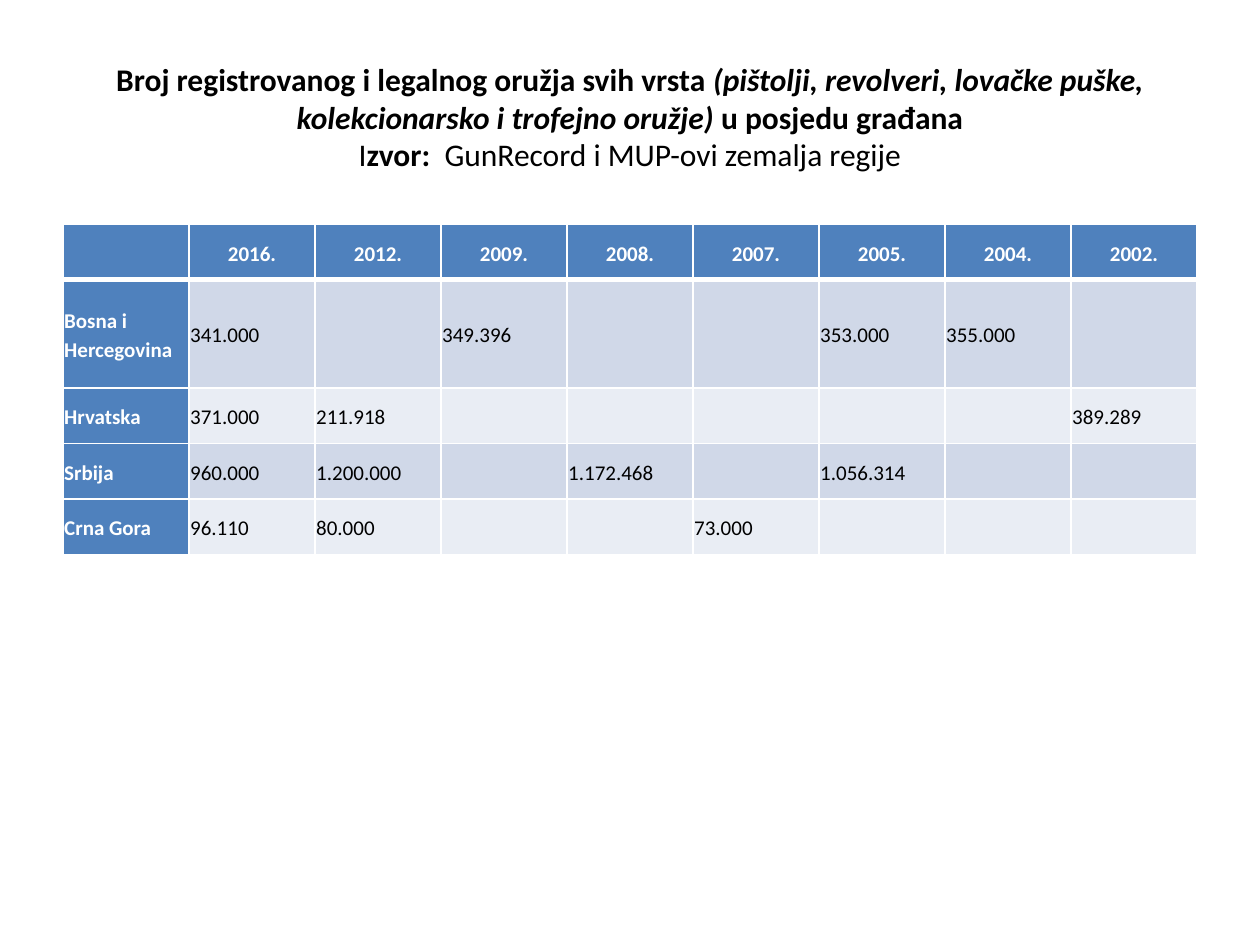
"""Build a slide with a table of registered weapons by country and year."""
import pptx
import pptx.dml.color
import pptx.enum.text
import pptx.oxml
import pptx.oxml.ns
import pptx.util

Inches, Pt = pptx.util.Inches, pptx.util.Pt
RGB = pptx.dml.color.RGBColor
ALIGN = pptx.enum.text.PP_ALIGN
MIDDLE = pptx.enum.text.MSO_ANCHOR.MIDDLE

BLACK = RGB(0x00, 0x00, 0x00)
WHITE = RGB(0xFF, 0xFF, 0xFF)
BLUE = RGB(0x4F, 0x81, 0xBD)
BANDS = [RGB(0xE9, 0xED, 0xF4), RGB(0xD0, 0xD8, 0xE8)]

YEARS = ["2016.", "2012.", "2009.", "2008.", "2007.", "2005.", "2004.", "2002."]
COUNTS = {
    "Bosna i Hercegovina": {"2016.": "341.000", "2009.": "349.396",
                            "2005.": "353.000", "2004.": "355.000"},
    "Hrvatska": {"2016.": "371.000", "2012.": "211.918", "2002.": "389.289"},
    "Srbija": {"2016.": "960.000", "2012.": "1.200.000",
               "2008.": "1.172.468", "2005.": "1.056.314"},
    "Crna Gora": {"2016.": "96.110", "2012.": "80.000", "2007.": "73.000"},
}
HEADING = [
    [("Broj registrovanog i legalnog oružja svih vrsta ", True, False),
     ("(pištolji, revolveri, lovačke puške, kolekcionarsko i trofejno oružje) ", True, True),
     ("u posjedu građana", True, False)],
    [("I", False, False), ("zvor:  ", True, False),
     ("GunRecord i MUP-ovi zemalja regije", False, False)],
]


def write(para, text, size, color, bold, italic=False):
    run = para.add_run()
    run.text = text
    font = run.font
    font.name, font.size = "Calibri", Pt(size)
    font.bold, font.italic = bold, italic
    font.color.rgb = color


def edge(cell, side, width, index):
    line = pptx.oxml.parse_xml(
        f'<a:ln{side} {pptx.oxml.ns.nsdecls("a")} w="{Pt(width)}">'
        f'<a:solidFill><a:srgbClr val="{WHITE}"/></a:solidFill></a:ln{side}>')
    cell._tc.get_or_add_tcPr().insert(index, line)


deck = pptx.Presentation()
deck.slide_width, deck.slide_height = Inches(10), Inches(7.5)
slide = deck.slides.add_slide(deck.slide_layouts[5])
left, width = int(deck.slide_width * 0.05), int(deck.slide_width * 0.9)

title = slide.shapes.title
title.left, title.top = left, int(deck.slide_height * 0.04)
title.width, title.height = width, Inches(1.25)
title.text_frame.vertical_anchor = MIDDLE
para = title.text_frame.paragraphs[0]
para.alignment = ALIGN.CENTER
for number, line in enumerate(HEADING):
    if number:
        para.add_line_break()
    for text, bold, italic in line:
        write(para, text, 18, BLACK, bold, italic)

grid = [[""] + YEARS]
grid += [[land] + [found.get(year, "") for year in YEARS]
         for land, found in COUNTS.items()]
unit = Inches(0.44)
table = slide.shapes.add_table(
    len(grid), len(grid[0]), left, Inches(1.78), width, unit * 6).table
for col in table.columns:
    col.width = width // len(grid[0])
for row in table.rows:
    row.height = unit
table.rows[1].height = Inches(0.86)

for r, texts in enumerate(grid):
    for c, text in enumerate(texts):
        cell = table.cell(r, c)
        head = r == 0 or c == 0
        cell.fill.solid()
        cell.fill.fore_color.rgb = BLUE if head else BANDS[r % 2]
        widths = {"L": 1, "R": 1, "T": 3 if r == 1 else 1, "B": 3 if r == 0 else 1}
        for index, (side, weight) in enumerate(widths.items()):
            edge(cell, side, weight, index)
        cell.margin_left = cell.margin_right = Inches(0.01)
        cell.margin_top = cell.margin_bottom = Inches(0.01)
        cell.vertical_anchor = MIDDLE
        para = cell.text_frame.paragraphs[0]
        para.line_spacing = 1.15
        para.alignment = ALIGN.CENTER if r == 0 else ALIGN.LEFT
        if text:
            write(para, text, 12, WHITE if head else BLACK, head)

deck.save("out.pptx")
